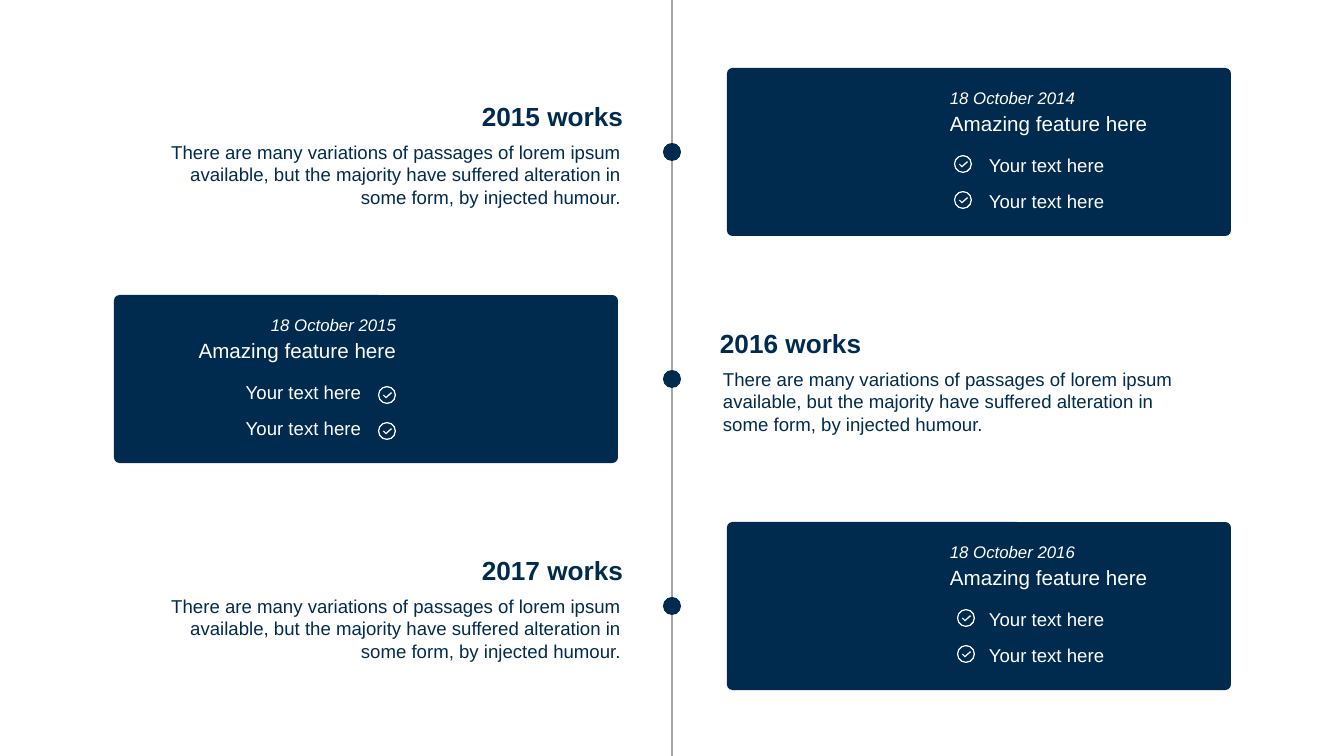
"""Build a timeline slide with three dated cards on alternating sides."""
from lxml import etree
from pptx import Presentation
from pptx import util as u
from pptx.dml.color import RGBColor
from pptx.enum import shapes, text
from pptx.oxml.ns import qn

SCALE = 914400 / 100.8
WIDE, HIGH = 1344, 756
MID = WIDE // 2
TOP, STEP = 68, 227
CARD_W, CARD_H = 504, 168
DOT = 18
COLORS = {"navy": "002B4E", "white": "FFFFFF", "gray": "A6A6A6"}
FORMATS = {
    "date": {"size": u.Pt(12), "italic": True},
    "title": {"size": u.Pt(14.7)},
    "item": {"size": u.Pt(13.3)},
    "head": {"size": u.Pt(18.7), "bold": True},
    "body": {"size": u.Pt(13.3)},
}
BODY = ("There are many variations of passages of lorem ipsum available, "
        "but the majority have suffered alteration in some form, "
        "by injected humour.")
TICK = [(130, 63), (80, 109), (57, 87), (50, 94), (80, 125), (142, 70)]
ROWS = [
    ("18 October 2014", "2015 works", True, (227, 87)),
    ("18 October 2015", "2016 works", False, (264, 91)),
    ("18 October 2016", "2017 works", True, (230, 87)),
]


def px(n):
    """Turn a length in px into EMU."""
    return u.Emu(round(n * SCALE))


def paint(shape, color):
    """Fill a shape with one flat colour."""
    shape.shadow.inherit = False
    shape.fill.solid()
    shape.fill.fore_color.rgb = RGBColor.from_string(COLORS[color])
    shape.line.fill.background()


def add_form(slide, kind, box, color, adjust=None):
    """Add a flat preset shape in the given box."""
    shape = slide.shapes.add_shape(kind, *map(px, box))
    paint(shape, color)
    if adjust is not None:
        shape.adjustments[0] = adjust


def add_text(slide, box, words, style, color, left, inset=True):
    """Add one wrapped paragraph, aligned left or right."""
    shape = slide.shapes.add_textbox(*map(px, box))
    frame = shape.text_frame
    frame.word_wrap = True
    frame.auto_size = text.MSO_AUTO_SIZE.SHAPE_TO_FIT_TEXT
    if not inset:
        for side in ("left", "right", "top", "bottom"):
            setattr(frame, f"margin_{side}", 0)
    para = frame.paragraphs[0]
    para.alignment = text.PP_ALIGN.LEFT if left else text.PP_ALIGN.RIGHT
    run = para.add_run()
    run.text = words
    for name, value in {"name": "Arial", **FORMATS[style]}.items():
        setattr(run.font, name, value)
    run.font.color.rgb = RGBColor.from_string(COLORS[color])


def add_tick(slide, x, y):
    """Add a ring with a check mark inside."""
    add_form(slide, shapes.MSO_SHAPE.DONUT, (x, y, DOT, DOT), "white", 0.07)
    path = slide.shapes.build_freeform(*TICK[0], scale=SCALE / 10)
    path.add_line_segments(TICK[1:], close=True)
    paint(path.convert_to_shape(px(x), px(y)), "white")


def add_card(slide, x, y, date, right, tick):
    """Add a dark card with a date, a title and two ticked items."""
    add_form(slide, shapes.MSO_SHAPE.ROUNDED_RECTANGLE,
             (x, y, CARD_W, CARD_H), "navy", 0.033)
    date_x, title_x, item_x = (213, 213, 252) if right else (124, 23, 88)
    lines = [
        (date_x, 15, 168, 30, date, "date"),
        (title_x, 38, 269, 35, "Amazing feature here", "title"),
    ]
    lines += [(item_x, top, 169, 33, "Your text here", "item")
              for top in (81, 117)]
    for dx, dy, w, h, words, style in lines:
        add_text(slide, (x + dx, y + dy, w, h), words, style, "white", right)
    for gap in (0, 36):
        add_tick(slide, x + tick[0], y + tick[1] + gap)


def add_note(slide, y, head, left):
    """Add a heading and its text beside the axis."""
    head_x, body_x = (710, 723) if left else (457, 169)
    add_text(slide, (head_x, y + 27, 176, 42), head, "head", "navy", left)
    add_text(slide, (body_x, y + 73, 452, 68), BODY, "body", "navy", left,
             inset=False)


def add_axis(slide):
    """Add the upright line and one dot for each row."""
    line = slide.shapes.add_connector(
        shapes.MSO_CONNECTOR.STRAIGHT, px(MID), 0, px(MID), px(HIGH))
    line.line.color.rgb = RGBColor.from_string(COLORS["gray"])
    line.line.width = u.Pt(1)
    etree.SubElement(line._element.spPr, qn("a:effectLst"))
    for row in range(len(ROWS)):
        y = TOP + row * STEP + (CARD_H - DOT) // 2
        add_form(slide, shapes.MSO_SHAPE.OVAL,
                 (MID - DOT // 2, y, DOT, DOT), "navy")


def main():
    """Build and save the slide."""
    deck = Presentation()
    deck.slide_width, deck.slide_height = px(WIDE), px(HIGH)
    slide = deck.slides.add_slide(deck.slide_layouts[6])
    add_axis(slide)
    for row, (date, head, right, tick) in enumerate(ROWS):
        y = TOP + row * STEP
        add_card(slide, 727 if right else 114, y, date, right, tick)
        add_note(slide, y, head, not right)
    deck.save("out.pptx")


if __name__ == "__main__":
    main()
